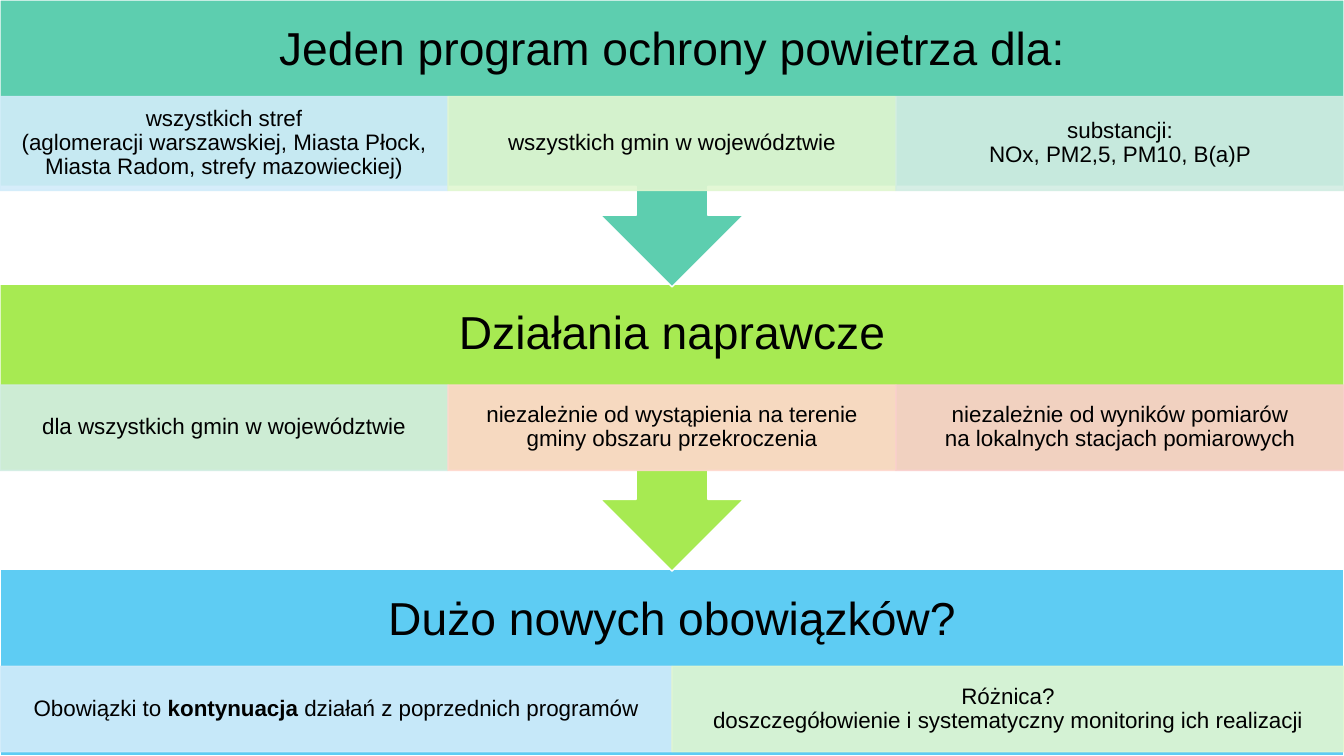
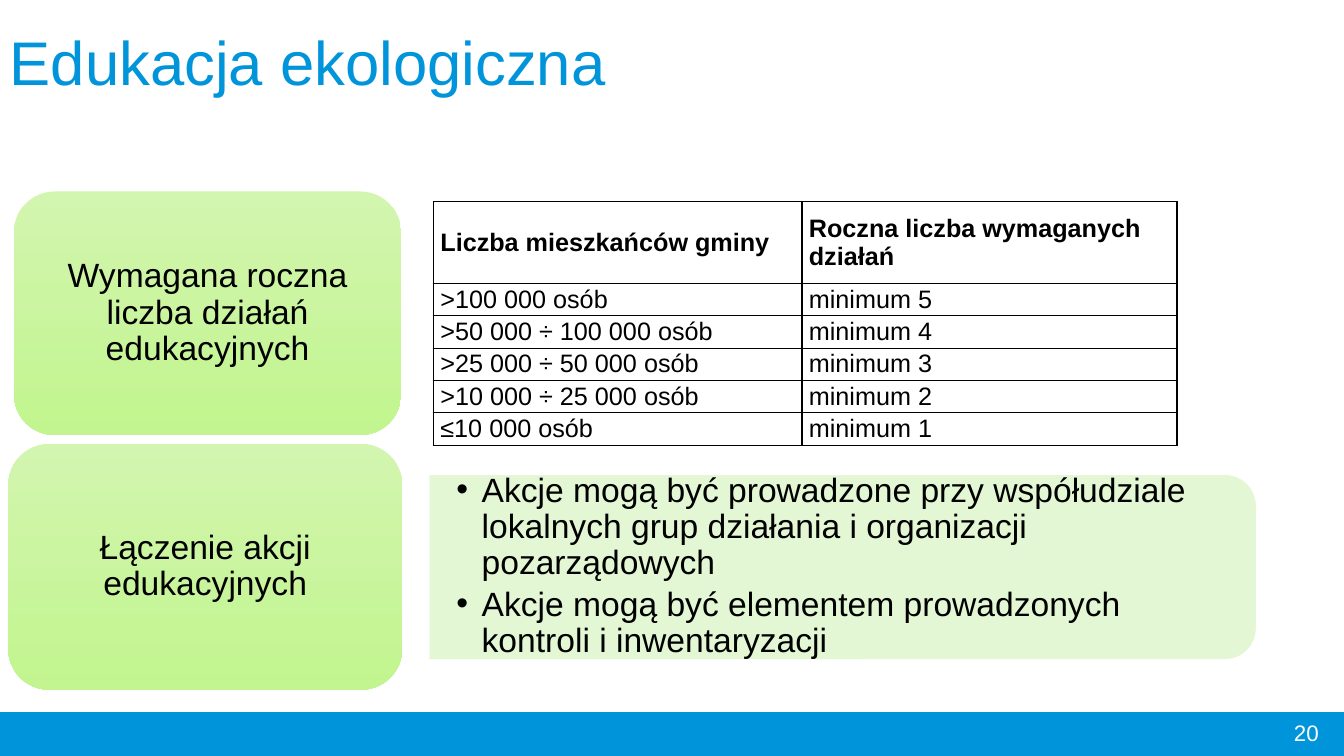
from lxml.etree import SubElement
from pptx import Presentation
from pptx.dml.color import RGBColor
from pptx.enum.shapes import MSO_SHAPE
from pptx.enum.text import MSO_ANCHOR, PP_ALIGN
from pptx.oxml import parse_xml
from pptx.oxml.ns import nsdecls, qn
from pptx.util import Pt

COLOURS = {
    "black": "000000",
    "white": "FFFFFF",
    "brand": "0094DA",
    "teal": "5DCEAF",
    "lime": "A7EA52",
    "sky": "5ECCF3",
    "pale sky": "D2ECFA",
    "pale lime": "E1F7D1",
    "pale teal": "D2EDE3",
    "pale orange": "FFD8CD",
    "pale red": "FACFCD",
    "gradient top": "D2F5AF",
    "gradient bottom": "C2F58F",
}
FONT = "Arial"
WIDTH, HEIGHT = 960, 540
FOOTER_TOP = 509


def write(frame, texts, size, colour="black", align=PP_ALIGN.CENTER,
          anchor=MSO_ANCHOR.MIDDLE, inset=(7.2, 3.6), spacing=0.9):
    """Write one paragraph per text; a newline breaks the line, asterisks enclose bold."""
    frame.word_wrap = True
    frame.vertical_anchor = anchor
    frame.margin_left = frame.margin_right = Pt(inset[0])
    frame.margin_top = frame.margin_bottom = Pt(inset[1])
    for index, text in enumerate(texts):
        paragraph = frame.paragraphs[0] if index == 0 else frame.add_paragraph()
        paragraph.alignment = align
        paragraph.line_spacing = spacing
        for line_index, line in enumerate(text.split("\n")):
            if line_index:
                paragraph.add_line_break()
            for part_index, part in enumerate(line.split("*")):
                if part:
                    run = paragraph.add_run()
                    run.text = part
                    run.font.name = FONT
                    run.font.size = Pt(size)
                    run.font.bold = part_index % 2 == 1
                    run.font.color.rgb = RGBColor.from_string(COLOURS[colour])


def add_panel(slide, kind, box, fill, line, line_width=1, opacity=100):
    """Add a preset shape with a solid fill and outline, opacity in percent."""
    shape = slide.shapes.add_shape(kind, *map(Pt, box))
    shape.shadow.inherit = False
    shape.fill.solid()
    shape.fill.fore_color.rgb = RGBColor.from_string(COLOURS[fill])
    shape.line.color.rgb = RGBColor.from_string(COLOURS[line])
    shape.line.width = Pt(line_width)
    if opacity < 100:
        for colour in list(shape._element.spPr.iter(qn("a:srgbClr"))):
            SubElement(colour, qn("a:alpha")).set("val", str(opacity * 1000))
    return shape


presentation = Presentation()
presentation.slide_width, presentation.slide_height = Pt(WIDTH), Pt(HEIGHT)
for _ in range(2):
    slide = presentation.slides.add_slide(presentation.slide_layouts[6])
    add_panel(slide, MSO_SHAPE.RECTANGLE,
              (0, FOOTER_TOP, WIDTH, HEIGHT - FOOTER_TOP), "brand", "brand")
program_slide, education_slide = presentation.slides

# Programme slide: three bands, the lowest one at the back
bands = [
    ("Dużo nowych obowiązków?", "sky", MSO_SHAPE.RECTANGLE, 407, 133, 476, 61, [
        ("Obowiązki to *kontynuacja* działań z poprzednich programów", "pale sky"),
        ("Różnica?\ndoszczegółowienie i systematyczny monitoring ich realizacji", "pale lime"),
    ]),
    ("Działania naprawcze", "lime", MSO_SHAPE.DOWN_ARROW_CALLOUT, 203, 205, 275, 61, [
        ("dla wszystkich gmin w województwie", "pale teal"),
        ("niezależnie od wystąpienia na terenie gminy obszaru przekroczenia", "pale orange"),
        ("niezależnie od wyników pomiarów\nna lokalnych stacjach pomiarowych", "pale red"),
    ]),
    ("Jeden program ochrony powietrza dla:", "teal", MSO_SHAPE.DOWN_ARROW_CALLOUT,
     0, 205, 69, 67, [
         ("wszystkich stref\n(aglomeracji warszawskiej, Miasta Płock,\n"
          "Miasta Radom, strefy mazowieckiej)", "pale sky"),
         ("wszystkich gmin w województwie", "pale lime"),
         ("substancji:\nNOx, PM2,5, PM10, B(a)P", "pale teal"),
     ]),
]
for heading, colour, kind, top, height, cell_top, cell_height, cells in bands:
    add_panel(program_slide, kind, (0, top, WIDTH, height), colour, "white")
    heading_box = program_slide.shapes.add_textbox(Pt(0), Pt(top), Pt(WIDTH), Pt(72))
    write(heading_box.text_frame, [heading], 33, inset=(18.7, 18.7))
    cell_width = WIDTH / len(cells)
    for column, (text, cell_colour) in enumerate(cells):
        cell_box = (column * cell_width, cell_top, cell_width, cell_height)
        panel = add_panel(program_slide, MSO_SHAPE.RECTANGLE, cell_box,
                          cell_colour, cell_colour, opacity=90)
        write(panel.text_frame, [text], 16, inset=(8.5, 1.5))

# Education slide: title, topics, table and remarks
title = education_slide.shapes.add_textbox(Pt(0), Pt(19.5), Pt(463), Pt(61))
write(title.text_frame, ["Edukacja ekologiczna"], 44, "brand", PP_ALIGN.LEFT, MSO_ANCHOR.TOP)

topics = [
    ("Wymagana roczna liczba działań edukacyjnych", (10, 136.8, 276.5, 174)),
    ("Łączenie akcji edukacyjnych", (5.8, 317, 281.5, 175.7)),
]
for text, box in topics:
    topic = add_panel(education_slide, MSO_SHAPE.ROUNDED_RECTANGLE, box,
                      "gradient top", "white")
    topic.line.fill.background()
    topic.fill.gradient()
    topic.fill.gradient_angle = 270
    for stop, position, name in zip(topic.fill.gradient_stops, (0, 1),
                                    ("gradient top", "gradient bottom")):
        stop.position = position
        stop.color.rgb = RGBColor.from_string(COLOURS[name])
    write(topic.text_frame, [text], 24)

remarks_panel = add_panel(education_slide, MSO_SHAPE.ROUND_2_SAME_RECTANGLE,
                          (536.4, 110.2, 131, 589.7), "pale lime", "pale lime", 0.5, 90)
remarks_panel.rotation = 90
remarks = education_slide.shapes.add_textbox(Pt(306.7), Pt(345.6), Pt(583.2), Pt(118))
write(remarks.text_frame, [
    "Akcje mogą być prowadzone przy współudziale lokalnych grup działania "
    "i organizacji pozarządowych",
    "Akcje mogą być elementem prowadzonych kontroli i inwentaryzacji",
], 24, align=PP_ALIGN.LEFT, inset=(19.4, 10))
for paragraph in remarks.text_frame.paragraphs:
    paragraph.space_after = Pt(3.6)
    properties = paragraph._p.get_or_add_pPr()
    properties.set("marL", str(Pt(18)))
    properties.set("indent", str(-Pt(18)))
    SubElement(properties, qn("a:buFont")).set("typeface", FONT)
    SubElement(properties, qn("a:buChar")).set("char", "•")

rows = [
    ("*Liczba mieszkańców gminy*", "*Roczna liczba wymaganych działań*"),
    (">100 000 osób", "minimum 5"),
    (">50 000 ÷ 100 000 osób", "minimum 4"),
    (">25 000 ÷ 50 000 osób", "minimum 3"),
    (">10 000 ÷ 25 000 osób", "minimum 2"),
    ("≤10 000 osób", "minimum 1"),
]
column_widths = (263.2, 268)
row_heights = [58.4] + [21.6] * (len(rows) - 1)
table = education_slide.shapes.add_table(
    len(rows), len(column_widths), Pt(309.6), Pt(144),
    Pt(sum(column_widths)), Pt(sum(row_heights))).table
table.first_row = table.horz_banding = False
for column, width in zip(table.columns, column_widths):
    column.width = Pt(width)
for row_index, (texts, height) in enumerate(zip(rows, row_heights)):
    table.rows[row_index].height = Pt(height)
    for column_index, text in enumerate(texts):
        cell = table.cell(row_index, column_index)
        cell.fill.background()
        write(cell.text_frame, [text], 18, align=PP_ALIGN.LEFT,
              spacing=1.07 if row_index else 1.0)
        cell.vertical_anchor = MSO_ANCHOR.TOP if row_index else MSO_ANCHOR.MIDDLE
        cell.margin_left = cell.margin_right = Pt(5)
        cell.margin_top = cell.margin_bottom = Pt(0)
        for position, side in enumerate("LRTB"):
            cell._tc.get_or_add_tcPr().insert(position, parse_xml(
                f'<a:ln{side} {nsdecls("a")} w="{Pt(1)}"><a:solidFill>'
                f'<a:srgbClr val="{COLOURS["black"]}"/></a:solidFill></a:ln{side}>'))

page_number = education_slide.shapes.add_textbox(Pt(733), Pt(FOOTER_TOP), Pt(216), Pt(29))
write(page_number.text_frame, ["20"], 16, "white", PP_ALIGN.RIGHT, spacing=1.0)

presentation.save("out.pptx")
